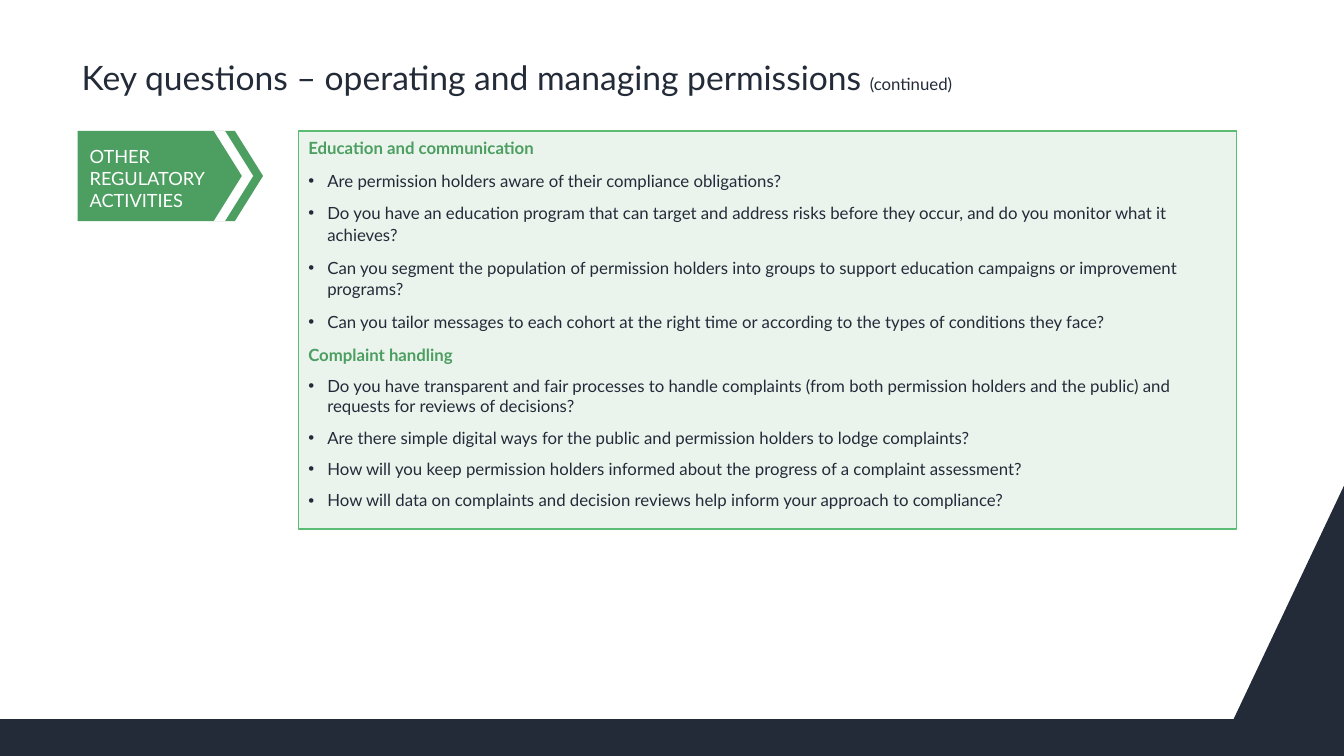
from dataclasses import dataclass

import pptx
import pptx.dml.color
import pptx.enum.shapes
import pptx.enum.text
import pptx.oxml
import pptx.oxml.ns
import pptx.util
from pptx.util import Cm, Pt

ANCHOR = pptx.enum.text.MSO_ANCHOR
ALIGN = pptx.enum.text.PP_ALIGN
RECT = pptx.enum.shapes.MSO_SHAPE.RECTANGLE


@dataclass(frozen=True)
class Theme:
    font: str = "Lato"
    navy: str = "232B39"
    green: str = "4C9E61"
    border: str = "5BBD74"
    tint: str = "EAF4EC"
    white: str = "FFFFFF"
    title: int = 24
    tag: int = 13
    body: int = 12


THEME = Theme()

# heading, line spacing of its questions, questions
SECTIONS = [
    ("Education and communication", 1.07, [
        "Are permission holders aware of their compliance obligations?",
        "Do you have an education program that can target and address risks "
        "before they occur, and do you monitor what it achieves?",
        "Can you segment the population of permission holders into groups to "
        "support education campaigns or improvement programs?",
        "Can you tailor messages to each cohort at the right time or according "
        "to the types of conditions they face?",
    ]),
    ("Complaint handling", 1.0, [
        "Do you have transparent and fair processes to handle complaints (from "
        "both permission holders and the public) and requests for reviews of decisions?",
        "Are there simple digital ways for the public and permission holders to "
        "lodge complaints?",
        "How will you keep permission holders informed about the progress of a "
        "complaint assessment?",
        "How will data on complaints and decision reviews help inform your "
        "approach to compliance?",
    ]),
]


def rgb(color):
    return pptx.dml.color.RGBColor.from_string(color)


def set_font(font, size, color, bold=False):
    font.name, font.size, font.bold = THEME.font, Pt(size), bold
    font.color.rgb = rgb(color)


def set_frame(tf, anchor, side, end):
    tf.word_wrap = True
    tf.vertical_anchor = anchor
    tf.margin_left = tf.margin_right = Cm(side)
    tf.margin_top = tf.margin_bottom = Cm(end)


def set_bullet(p, indent):
    pPr = p._p.get_or_add_pPr()
    pPr.set("marL", str(Cm(indent)))
    pPr.set("indent", str(-Cm(indent)))
    for tag, name, value in (("a:buFont", "typeface", "Arial"), ("a:buChar", "char", "•")):
        bullet = pptx.oxml.parse_xml(f'<{tag} {pptx.oxml.ns.nsdecls("a")} {name}="{value}"/>')
        # bullets come before the default run properties
        pPr.insert_element_before(bullet, "a:tabLst", "a:defRPr", "a:extLst")


def add_outline(slide, points, color):
    """Add a closed, filled polygon; points are in centimetres."""
    (x, y), *rest = [(Cm(px), Cm(py)) for px, py in points]
    builder = slide.shapes.build_freeform(x, y)
    builder.add_line_segments(rest, close=True)
    sp = builder.convert_to_shape()
    sp.shadow.inherit = False
    sp.fill.solid()
    sp.fill.fore_color.rgb = rgb(color)
    sp.line.fill.background()


def add_footer(slide, left, top, width, height):
    """Add the dark strip that rises to a wedge at the right edge."""
    right, bottom = left + width, top + height
    strip_top = bottom - 0.93
    add_outline(slide, [(left, strip_top), (right - 2.78, strip_top), (right, top),
                        (right, bottom), (left, bottom)], THEME.navy)


def add_title(slide, left, top, width, height):
    tf = slide.shapes.add_textbox(Cm(left), Cm(top), Cm(width), Cm(height)).text_frame
    set_frame(tf, ANCHOR.BOTTOM, 0.1, 0.13)
    p = tf.paragraphs[0]
    p.line_spacing = 0.9
    for text, size in (("Key questions – operating and managing permissions ", THEME.title),
                       ("(continued)", THEME.body)):
        r = p.add_run()
        r.text = text
        set_font(r.font, size, THEME.navy)


def add_tag(slide, left, top, width, height):
    """Add the arrow-shaped tag, its white chevron and its label."""
    middle, bottom, right = top + height / 2, top + height, left + width
    depth, band = 0.71, 0.28
    shoulder = right - depth
    add_outline(slide, [(left, top), (shoulder, top), (right, middle),
                        (shoulder, bottom), (left, bottom)], THEME.green)
    inner = shoulder - 0.53
    outer = inner + band
    add_outline(slide, [(inner, top), (outer, top), (outer + depth, middle), (outer, bottom),
                        (inner, bottom), (inner + depth, middle)], THEME.white)

    label = slide.shapes.add_textbox(Cm(left + 0.2), Cm(top + 0.71), Cm(3.48), Cm(0.97))
    tf = label.text_frame
    set_frame(tf, ANCHOR.MIDDLE, 0.1, 0.1)
    p = tf.paragraphs[0]
    p.text = "OTHER REGULATORY ACTIVITIES"
    set_font(p.font, THEME.tag, THEME.white)


def add_questions(slide, left, top, width, height):
    sp = slide.shapes.add_shape(RECT, Cm(left), Cm(top), Cm(width), Cm(height))
    sp.shadow.inherit = False
    sp.fill.solid()
    sp.fill.fore_color.rgb = rgb(THEME.tint)
    sp.line.color.rgb = rgb(THEME.border)
    sp.line.width = Pt(1)
    tf = sp.text_frame
    set_frame(tf, ANCHOR.TOP, 0.25, 0.13)

    lines = []
    for heading, spacing, questions in SECTIONS:
        lines.append((heading, 1.07, True))
        lines += [(question, spacing, False) for question in questions]
    for i, (text, spacing, is_heading) in enumerate(lines):
        p = tf.add_paragraph() if i else tf.paragraphs[0]
        p.text = text
        p.alignment = ALIGN.LEFT
        p.line_spacing = spacing
        p.space_before, p.space_after = Pt(6), Pt(2)
        set_font(p.font, THEME.body, THEME.green if is_heading else THEME.navy, is_heading)
        if not is_heading:
            set_bullet(p, 0.48)


def main():
    prs = pptx.Presentation()
    prs.slide_width, prs.slide_height = Cm(33.87), Cm(19.05)
    slide = prs.slides.add_slide(prs.slide_layouts[6])
    add_footer(slide, 0, 12.24, 33.87, 6.81)
    add_title(slide, 1.96, -0.28, 29.21, 2.87)
    add_questions(slide, 7.52, 3.3, 23.65, 10.03)
    add_tag(slide, 1.96, 3.3, 4.67, 2.27)
    prs.save("out.pptx")


if __name__ == "__main__":
    main()
